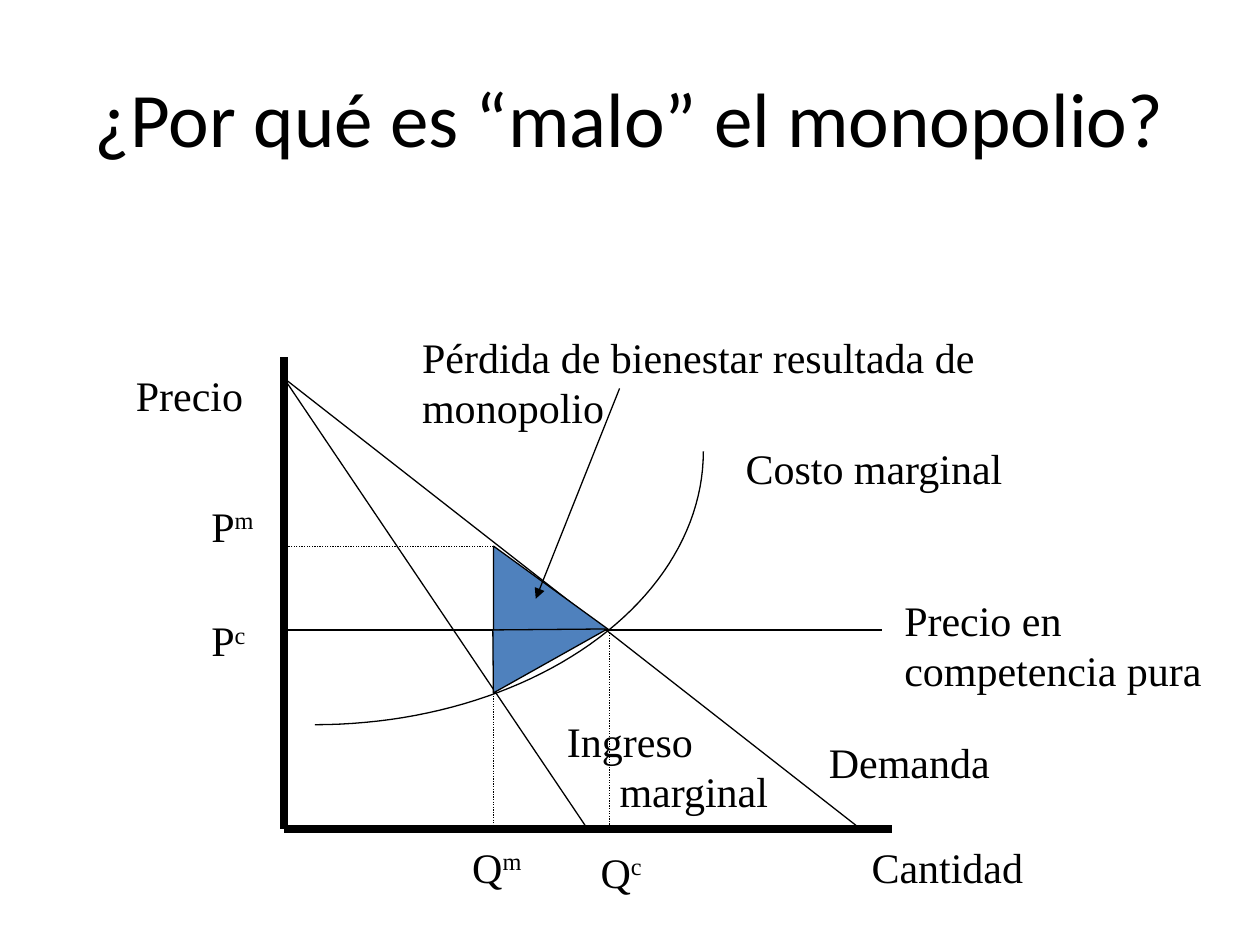
from math import cos, pi, sin

from lxml import etree
from pptx import Presentation
from pptx.dml.color import RGBColor
from pptx.enum.dml import MSO_LINE
from pptx.enum.shapes import MSO_CONNECTOR, MSO_SHAPE
from pptx.enum.text import MSO_ANCHOR, MSO_AUTO_SIZE, PP_ALIGN
from pptx.oxml.ns import qn
from pptx.util import Cm, Pt

STRAIGHT = MSO_CONNECTOR.STRAIGHT
RIGHT_TRIANGLE = MSO_SHAPE.RIGHT_TRIANGLE
DOTTED = MSO_LINE.ROUND_DOT
MIDDLE = MSO_ANCHOR.MIDDLE
CENTER = PP_ALIGN.CENTER
GROW = MSO_AUTO_SIZE.SHAPE_TO_FIT_TEXT

THEME = {
    "ink": RGBColor(0x00, 0x00, 0x00),
    "loss": RGBColor(0x4F, 0x81, 0xBD),
    "title": {"name": "Calibri", "size": Pt(44)},
    "label": {"name": "Times New Roman", "size": Pt(24)},
    "thin": Pt(0.75),
    "thick": Pt(4.5),
}


def style_font(font, formats):
    for attribute, value in formats.items():
        setattr(font, attribute, value)
    font.color.rgb = THEME["ink"]


def style_line(line, width):
    line.color.rgb = THEME["ink"]
    line.width = width


presentation = Presentation()
presentation.slide_width = Cm(25.4)
presentation.slide_height = Cm(19.05)
slide = presentation.slides.add_slide(presentation.slide_layouts[5])

title = slide.shapes.title
title.left, title.top, title.width, title.height = Cm(1.27), Cm(0.76), Cm(22.86), Cm(3.18)
title.text_frame.vertical_anchor = MIDDLE
title.text_frame.text = "¿Por qué es “malo” el monopolio?"
title_paragraph = title.text_frame.paragraphs[0]
title_paragraph.alignment = CENTER
style_font(title_paragraph.runs[0].font, THEME["title"])

axis_x, axis_y = 5.72, 16.72
choke_price = 7.62
monopoly_quantity, monopoly_price = 9.95, 11.01
competitive_quantity, competitive_price = 12.28, 12.7

lines = [
    ((axis_x, 7.2), (axis_x, axis_y), "thick", None),
    ((axis_x, axis_y), (17.99, axis_y), "thick", None),
    ((axis_x, choke_price), (17.36, axis_y), "thin", None),
    ((axis_x, choke_price), (11.85, axis_y), "thin", None),
    ((monopoly_quantity, monopoly_price), (axis_x, monopoly_price), "thin", DOTTED),
    ((monopoly_quantity, monopoly_price), (monopoly_quantity, axis_y), "thin", DOTTED),
    ((axis_x, competitive_price), (17.78, competitive_price), "thin", None),
    ((competitive_quantity, competitive_price), (competitive_quantity, axis_y), "thin", DOTTED),
    ((12.49, 7.83), (10.8, 12.07), "thin", None),
]
connectors = []
for start, end, weight, dash in lines:
    connector = slide.shapes.add_connector(STRAIGHT, *map(Cm, start + end))
    style_line(connector.line, THEME[weight])
    if dash:
        connector.line.dash_style = dash
    etree.SubElement(connector._element.spPr, qn("a:effectLst"))
    connectors.append(connector)

curve_left, curve_top, curve_width, curve_height = 6.35, 9.1, 7.83, 5.51
steps = 48
angles = [pi / 2 * step / steps for step in range(steps + 1)]
curve_points = [
    (Cm(curve_left + curve_width * sin(angle)), Cm(curve_top + curve_height * cos(angle)))
    for angle in angles
]
builder = slide.shapes.build_freeform(*curve_points[0])
builder.add_line_segments(curve_points[1:], close=False)
marginal_cost = builder.convert_to_shape()
marginal_cost.shadow.inherit = False
marginal_cost.fill.background()
style_line(marginal_cost.line, THEME["thin"])

loss_triangles = [
    (monopoly_quantity, monopoly_price, 2.33, 1.69, 0),
    (10.46, 12.17, 1.27, 2.31, 89.5),
]
for left, top, width, height, rotation in loss_triangles:
    triangle = slide.shapes.add_shape(RIGHT_TRIANGLE, Cm(left), Cm(top), Cm(width), Cm(height))
    triangle.rotation = rotation
    triangle.shadow.inherit = False
    triangle.fill.solid()
    triangle.fill.fore_color.rgb = THEME["loss"]
    style_line(triangle.line, THEME["thin"])

loss_arrow = connectors[-1]
etree.SubElement(loss_arrow.line._get_or_add_ln(), qn("a:tailEnd"), type="triangle")
slide.shapes._spTree.append(loss_arrow._element)

labels = [
    (17.32, 16.84, 3.56, 1.27, False, [("Cantidad", "", 0)]),
    (2.49, 7.32, 2.67, 1.27, False, [("Precio", "", 0)]),
    (16.46, 14.73, 3.76, 1.27, False, [("Demanda", "", 0)]),
    (11.18, 14.3, 4.57, 2.29, False, [("Ingreso", "", 0), ("marginal", "", 1.06)]),
    (14.78, 8.79, 5.69, 1.27, False, [("Costo marginal", "", 0)]),
    (9.27, 16.84, 1.57, 1.27, False, [("Q", "m", 0)]),
    (11.86, 16.94, 1.37, 1.27, False, [("Q", "c", 0)]),
    (4.01, 9.96, 1.42, 2.29, True, [("P", "m", 0)]),
    (4.01, 12.27, 1.42, 2.29, True, [("P", "c", 0)]),
    (17.98, 11.86, 6.5, 2.29, False, [("Precio en", "", 0), ("competencia pura", "", 0)]),
    (8.26, 6.55, 15.2, 1.27, True, [("Pérdida de bienestar resultada de monopolio", "", 0)]),
]
for left, top, width, height, wrap, paragraphs in labels:
    label = slide.shapes.add_textbox(Cm(left), Cm(top), Cm(width), Cm(height))
    frame = label.text_frame
    frame.word_wrap = wrap
    frame.auto_size = GROW
    for index, (text, superscript, indent) in enumerate(paragraphs):
        paragraph = frame.add_paragraph() if index else frame.paragraphs[0]
        if indent:
            paragraph._p.get_or_add_pPr().set("marL", str(Cm(indent)))
        for content, baseline in ((text, None), (superscript, "30000")):
            if content:
                run = paragraph.add_run()
                run.text = content
                style_font(run.font, THEME["label"])
                if baseline:
                    run.font._element.set("baseline", baseline)

presentation.save("out.pptx")
